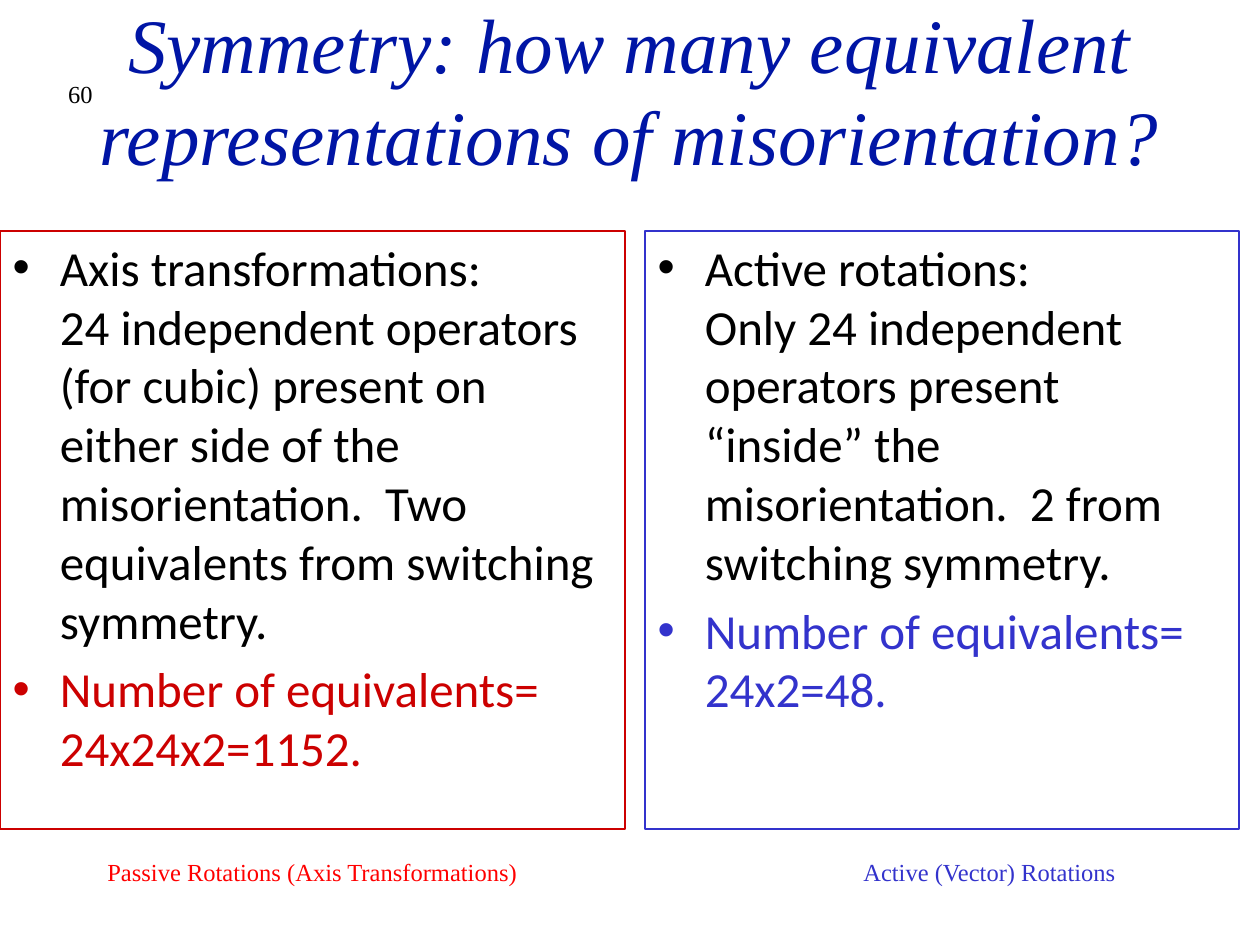
from pptx import Presentation
from pptx.dml.color import RGBColor
from pptx.enum.text import MSO_ANCHOR, MSO_AUTO_SIZE, PP_ALIGN
from pptx.oxml import parse_xml
from pptx.oxml.ns import nsdecls
from pptx.util import Emu, Pt

SCALE = 914400 / 126
SERIF, SANS = "Times New Roman", "Calibri"
BLACK, NAVY, RED, BRIGHT, BLUE = "000000", "0015A5", "CC0000", "FF0000", "3333CC"


def px(n):
    """Turn pixels into EMU."""
    return Emu(round(n * SCALE))


def color(code):
    """Turn a hex string into a colour."""
    return RGBColor.from_string(code)


def place(shape, left, top, width, height):
    """Set the position and size of a shape."""
    shape.left, shape.top = px(left), px(top)
    shape.width, shape.height = px(width), px(height)


def style(para, face, size, code):
    """Format every run of a paragraph."""
    for run in para.runs:
        run.font.name, run.font.size = face, Pt(size)
        run.font.color.rgb = color(code)


def title(slide, text):
    """Fill the title placeholder."""
    shape = slide.shapes.title
    place(shape, 0, 10, 1260, 158)
    frame = shape.text_frame
    frame.text = text
    frame.auto_size = MSO_AUTO_SIZE.NONE
    frame.vertical_anchor = MSO_ANCHOR.MIDDLE
    para = frame.paragraphs[0]
    para.alignment = PP_ALIGN.CENTER
    style(para, SERIF, 44, NAVY)
    para.runs[0].font.italic = True


def panel(shape, left, width, code, body, count):
    """Fill an outlined list whose last item takes the outline colour."""
    place(shape, left, 231, width, 598)
    shape.line.color.rgb = color(code)
    shape.line.width = Pt(0.75)
    frame = shape.text_frame
    frame.auto_size = MSO_AUTO_SIZE.NONE
    first, last = frame.paragraphs[0], frame.add_paragraph()
    for para, text, ink in ((first, body, BLACK), (last, count, code)):
        para.text = text
        style(para, SANS, 28, ink)


def label(slide, box, text, code, wrap=True):
    """Add a small serif text box and return its paragraph."""
    shape = slide.shapes.add_textbox(0, 0, 0, 0)
    place(shape, *box)
    frame = shape.text_frame
    frame.word_wrap = wrap
    para = frame.paragraphs[0]
    para.text = text
    style(para, SERIF, 14, code)
    return para


def legend(slide):
    """Add the two captions, set apart by a tab stop."""
    para = label(slide, (95, 851, 1036, 42),
                 "Passive Rotations (Axis Transformations)\t", BRIGHT, False)
    run = para.add_run()
    run.text = "Active (Vector) Rotations"
    style(para, SERIF, 14, BRIGHT)
    run.font.color.rgb = color(BLUE)
    stop = f'<a:tabLst {nsdecls("a")}><a:tab pos="{px(756)}" algn="l"/></a:tabLst>'
    para._p.get_or_add_pPr().append(parse_xml(stop))


def main():
    """Build and save the slide."""
    deck = Presentation()
    deck.slide_width, deck.slide_height = px(1260), px(945)
    slide = deck.slides.add_slide(deck.slide_layouts[3])
    label(slide, (32, 73, 73, 63), "60", BLACK).alignment = PP_ALIGN.RIGHT
    title(slide, "Symmetry: how many equivalent representations of misorientation?")
    panel(slide.placeholders[1], 0, 625, RED,
          "Axis transformations:\n24 independent operators (for cubic) present on "
          "either side of the misorientation.  Two equivalents from switching symmetry.",
          "Number of equivalents=\n24x24x2=1152.")
    panel(slide.placeholders[2], 645, 594, BLUE,
          "Active rotations:\nOnly 24 independent operators present “inside” the "
          "misorientation.  2 from switching symmetry.",
          "Number of equivalents=\n24x2=48.")
    legend(slide)
    deck.save("out.pptx")


if __name__ == "__main__":
    main()
